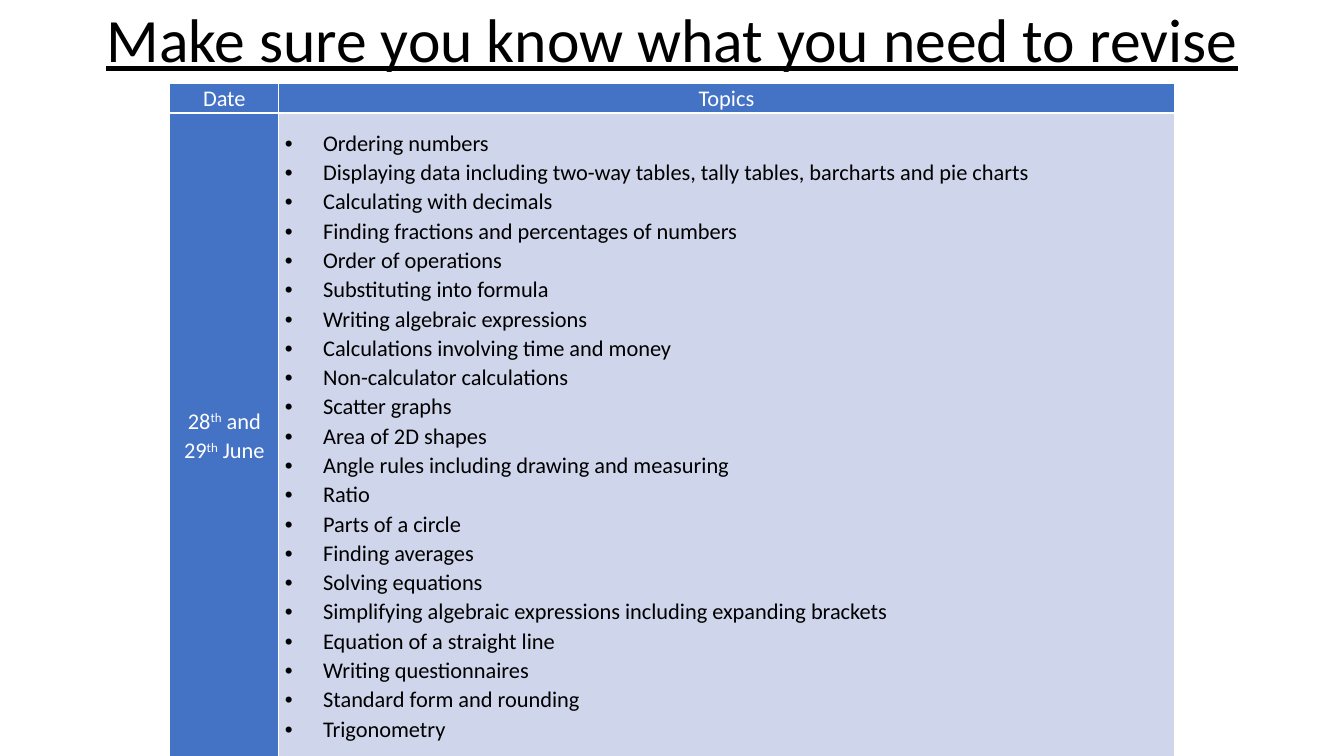
from lxml.etree import SubElement as Sub
from pptx import Presentation
from pptx.dml.color import RGBColor as Color
from pptx.enum.text import MSO_ANCHOR as Anchor, PP_ALIGN as Align
from pptx.oxml.ns import qn
from pptx.util import Inches, Pt

TITLE = "Make sure you know what you need to revise"
HEADS = ["Date", "Topics"]
DATE = [("28", 0), ("th", 1), (" and 29", 0), ("th", 1), (" June", 0)]
TOPICS = [
    "Ordering numbers",
    "Displaying data including two-way tables, tally tables, barcharts and pie charts",
    "Calculating with decimals",
    "Finding fractions and percentages of numbers",
    "Order of operations",
    "Substituting into formula",
    "Writing algebraic expressions",
    "Calculations involving time and money",
    "Non-calculator calculations",
    "Scatter graphs",
    "Area of 2D shapes",
    "Angle rules including drawing and measuring",
    "Ratio",
    "Parts of a circle",
    "Finding averages",
    "Solving equations",
    "Simplifying algebraic expressions including expanding brackets",
    "Equation of a straight line",
    "Writing questionnaires",
    "Standard form and rounding",
    "Trigonometry",
]
WIDE, HIGH = 13.33, 7.5
COLS, ROWS = [1.08, 8.88], [0.27, 6.4]
BLUE, PALE, WHITE, BLACK = "4472C4", "CFD5EA", "FFFFFF", "000000"
INDENT = 0.38


def tint(code):
    return Color.from_string(code)


def put(item, **vals):
    for key, val in vals.items():
        setattr(item, key, val)


def write(para, text, size, ink, raised=0, **vals):
    run = para.add_run()
    run.text = text
    put(run.font, name="Calibri", size=Pt(size), bold=False, **vals)
    run.font.color.rgb = tint(ink)
    if raised:
        run.font._element.set("baseline", "30000")


def bullet(para):
    props = para._p.get_or_add_pPr()
    props.set("marL", str(Inches(INDENT)))
    props.set("indent", str(-Inches(INDENT)))
    Sub(props, qn("a:buFont"), typeface="Arial")
    Sub(props, qn("a:buChar"), char="•")


def edge(cell):
    props = cell._tc.get_or_add_tcPr()
    for spot, side in enumerate("LRTB"):
        line = Sub(props, qn(f"a:ln{side}"), w=str(Pt(1)))
        fill = Sub(line, qn("a:solidFill"))
        Sub(fill, qn("a:srgbClr"), val=WHITE)
        props.insert(spot, line)


def fill_cell(cell, paras, back, ink, listed=False):
    put(cell, margin_left=Inches(0.06), margin_right=Inches(0.06),
        margin_top=0, margin_bottom=0, vertical_anchor=Anchor.MIDDLE)
    cell.fill.solid()
    cell.fill.fore_color.rgb = tint(back)
    edge(cell)
    frame = cell.text_frame
    for num, runs in enumerate(paras):
        para = frame.add_paragraph() if num else frame.paragraphs[0]
        put(para, line_spacing=1.07, alignment=Align.LEFT if listed else Align.CENTER)
        if listed:
            bullet(para)
        for text, raised in runs:
            write(para, text, 16, ink, raised)


deck = Presentation()
put(deck, slide_width=Inches(WIDE), slide_height=Inches(HIGH))
slide = deck.slides.add_slide(deck.slide_layouts[5])

title = slide.shapes.title
put(title, left=Inches(0.92), top=0, width=Inches(11.5), height=Inches(0.84))
put(title.text_frame, word_wrap=True, vertical_anchor=Anchor.MIDDLE)
head = title.text_frame.paragraphs[0]
put(head, alignment=Align.CENTER, line_spacing=0.9)
write(head, TITLE, 44, BLACK, underline=True)

wide, high = sum(COLS), sum(ROWS)
grid = slide.shapes.add_table(
    len(ROWS), len(COLS), Inches((WIDE - wide) / 2), Inches(HIGH - high),
    Inches(wide), Inches(high)).table
for col, size in zip(grid.columns, COLS):
    col.width = Inches(size)
for row, size in zip(grid.rows, ROWS):
    row.height = Inches(size)

for num, text in enumerate(HEADS):
    fill_cell(grid.cell(0, num), [[(text, 0)]], BLUE, WHITE)
fill_cell(grid.cell(1, 0), [DATE], BLUE, WHITE)
fill_cell(grid.cell(1, 1), [[(text, 0)] for text in TOPICS], PALE, BLACK, True)

deck.save("out.pptx")
